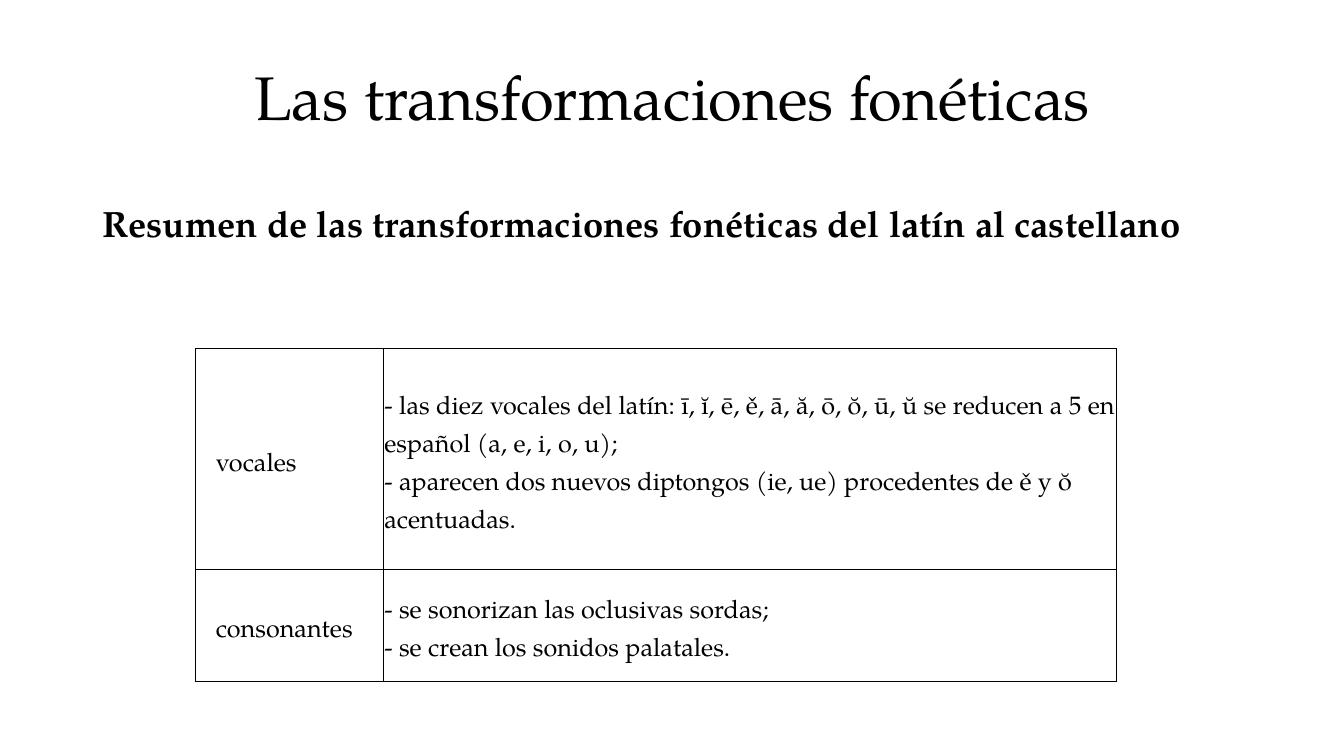
from lxml import etree
from pptx import Presentation, util as u
from pptx.dml.color import RGBColor
from pptx.enum import text
from pptx.oxml.ns import qn

FONT = "TeX Gyre Pagella"
COLORS = {"ink": "000000", "paper": "FFFFFF"}
WIDTH, HEIGHT = u.Inches(13.33), u.Inches(7.5)
LEFT, CENTER, JUSTIFY = (
    text.PP_ALIGN.LEFT, text.PP_ALIGN.CENTER, text.PP_ALIGN.JUSTIFY)
MIDDLE, TOP = text.MSO_ANCHOR.MIDDLE, text.MSO_ANCHOR.TOP

TITLE = "Las transformaciones fonéticas"
SUBTITLE = "Resumen de las transformaciones fonéticas del latín al castellano"
CHANGES = [
    ("vocales", [
        ("- las diez vocales del latín: ī, ĭ, ē, ě, ā, ă, ō, ŏ, ū, ŭ "
         "se reducen a 5 en español (a, e, i, o, u);", JUSTIFY),
        ("- aparecen dos nuevos diptongos (ie, ue) procedentes de ě y ŏ "
         "acentuadas.", LEFT),
    ]),
    ("consonantes", [
        ("- se sonorizan las oclusivas sordas;", LEFT),
        ("- se crean los sonidos palatales.", LEFT),
    ]),
]
COLUMN_SHARES = (0.204, 0.796)
ROW_SHARES = (0.664, 0.336)


def write(paragraph, content, size=18, bold=False, align=LEFT,
          spacing=0.9, before=0):
    paragraph.alignment = align
    paragraph.line_spacing = spacing
    paragraph.space_before = u.Pt(before)
    run = paragraph.add_run()
    run.text = content
    run.font.name = FONT
    run.font.size = u.Pt(size)
    run.font.bold = bold
    run.font.color.rgb = RGBColor.from_string(COLORS["ink"])


def add_heading(slide, box, content, anchor=TOP, **style):
    frame = slide.shapes.add_textbox(*box).text_frame
    frame.word_wrap = True
    frame.vertical_anchor = anchor
    write(frame.paragraphs[0], content, **style)


def format_cell(cell, lines, indent=0.01):
    cell.margin_left = u.Inches(indent)
    cell.margin_right = cell.margin_top = cell.margin_bottom = u.Inches(0.01)
    cell.vertical_anchor = MIDDLE
    properties = cell._tc.get_or_add_tcPr()
    for side in ("a:lnL", "a:lnR", "a:lnT", "a:lnB"):
        line = etree.SubElement(properties, qn(side), w=str(u.Pt(1)))
        fill = etree.SubElement(line, qn("a:solidFill"))
        etree.SubElement(fill, qn("a:srgbClr"), val=COLORS["ink"])
    cell.fill.background()
    frame = cell.text_frame
    for index, (content, align) in enumerate(lines):
        paragraph = frame.add_paragraph() if index else frame.paragraphs[0]
        write(paragraph, content, align=align, spacing=1.5)


def add_changes_table(slide, box):
    left, top, width, height = box
    table = slide.shapes.add_table(
        len(CHANGES), len(COLUMN_SHARES), left, top, width, height).table
    table.first_row = table.horz_banding = False
    for column, share in zip(table.columns, COLUMN_SHARES):
        column.width = int(width * share)
    for row, share in zip(table.rows, ROW_SHARES):
        row.height = int(height * share)
    for index, (label, lines) in enumerate(CHANGES):
        format_cell(table.cell(index, 0), [(label, LEFT)], indent=0.2)
        format_cell(table.cell(index, 1), lines)


def add_summary_slide(presentation):
    slide = presentation.slides.add_slide(presentation.slide_layouts[6])
    background = slide.background.fill
    background.solid()
    background.fore_color.rgb = RGBColor.from_string(COLORS["paper"])
    margin, content_width = u.Inches(0.92), u.Inches(11.5)
    add_heading(slide, (margin, u.Inches(0.4), content_width, u.Inches(1.2)),
                TITLE, anchor=MIDDLE, size=44, align=CENTER)
    add_heading(slide, (margin, u.Inches(2), content_width, u.Inches(4.99)),
                SUBTITLE, size=26, bold=True, before=10)
    add_changes_table(slide, (u.Inches(1.94), u.Inches(3.46),
                              u.Inches(9.13), u.Inches(3.3)))


def main():
    presentation = Presentation()
    presentation.slide_width, presentation.slide_height = WIDTH, HEIGHT
    add_summary_slide(presentation)
    presentation.save("out.pptx")


if __name__ == "__main__":
    main()
